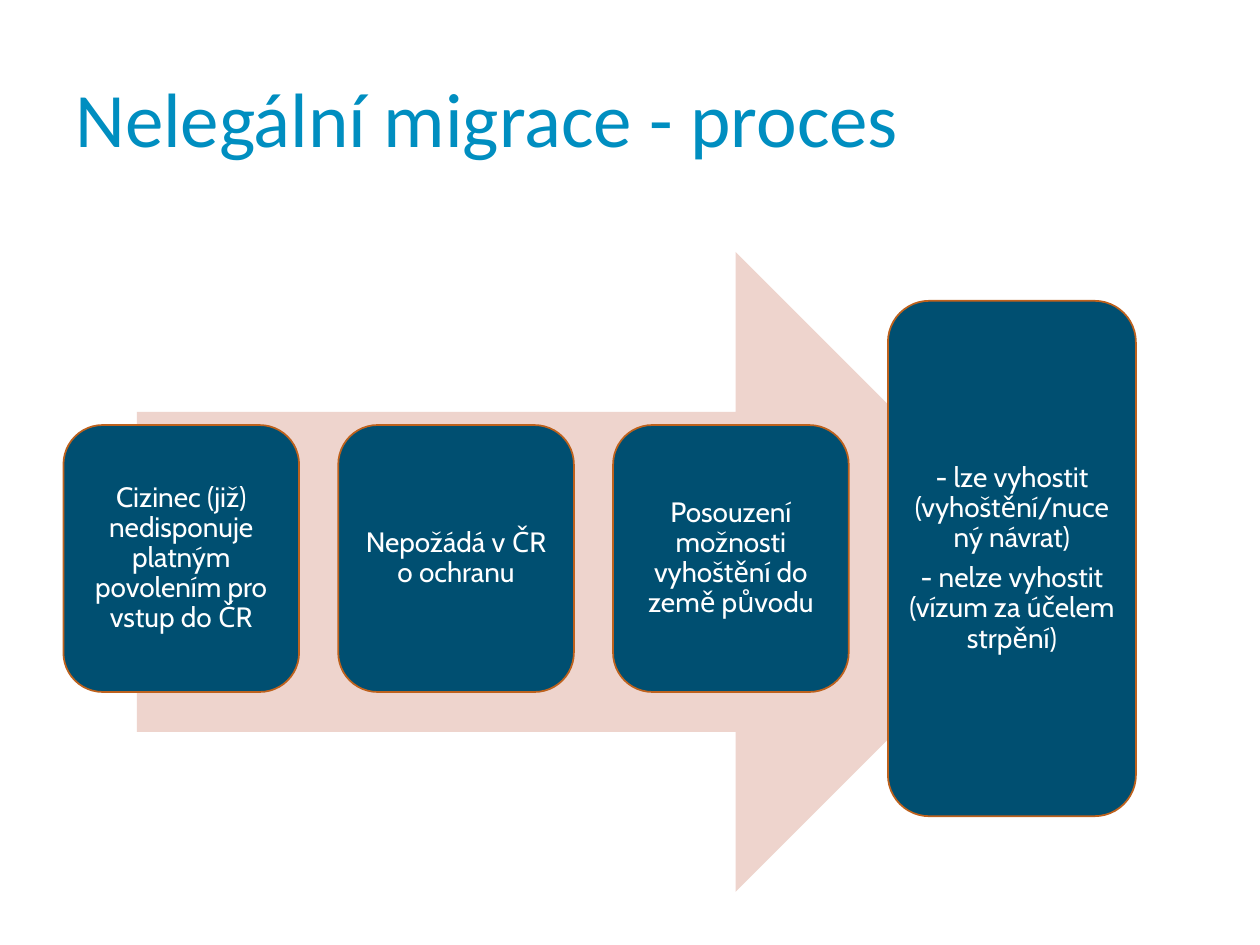
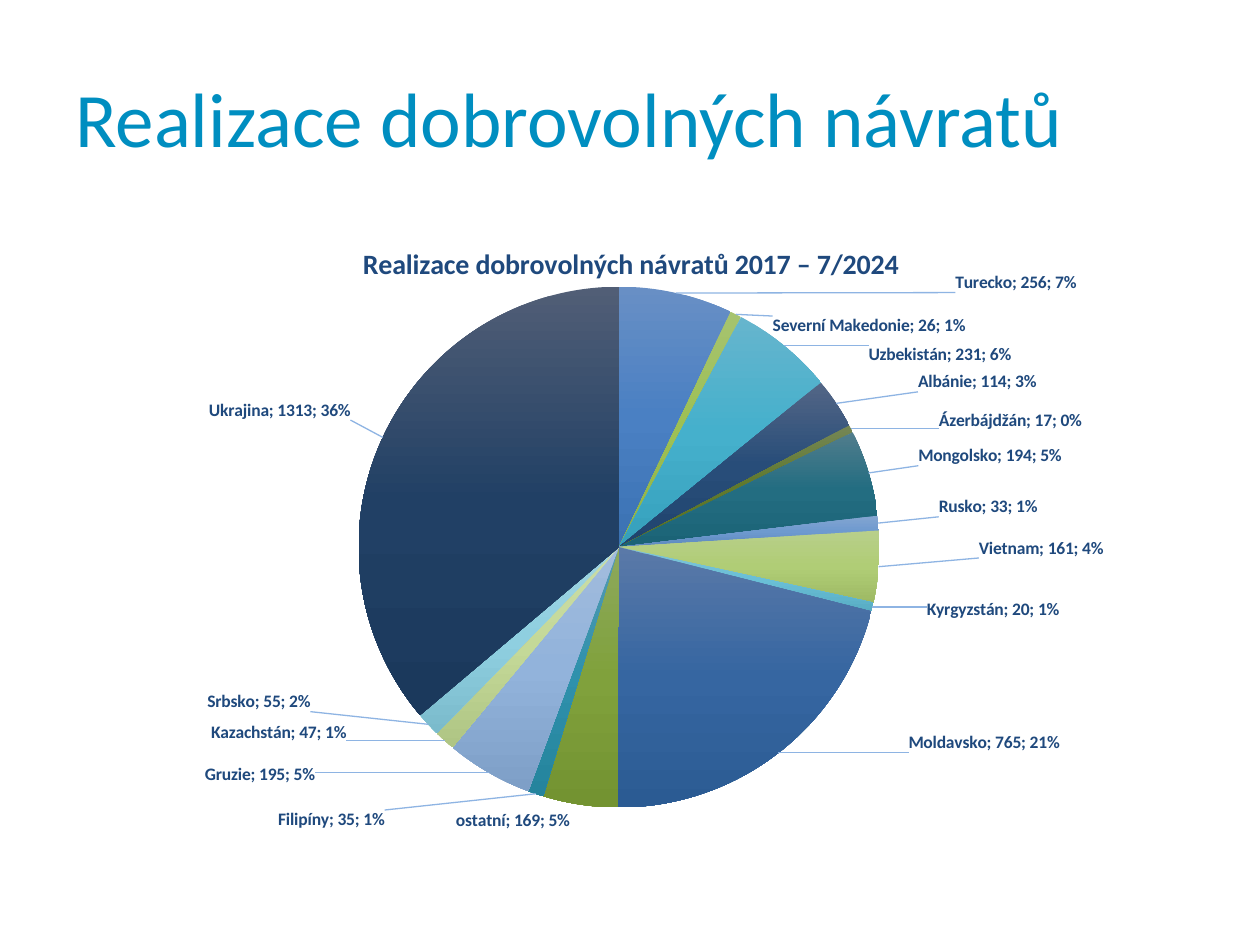
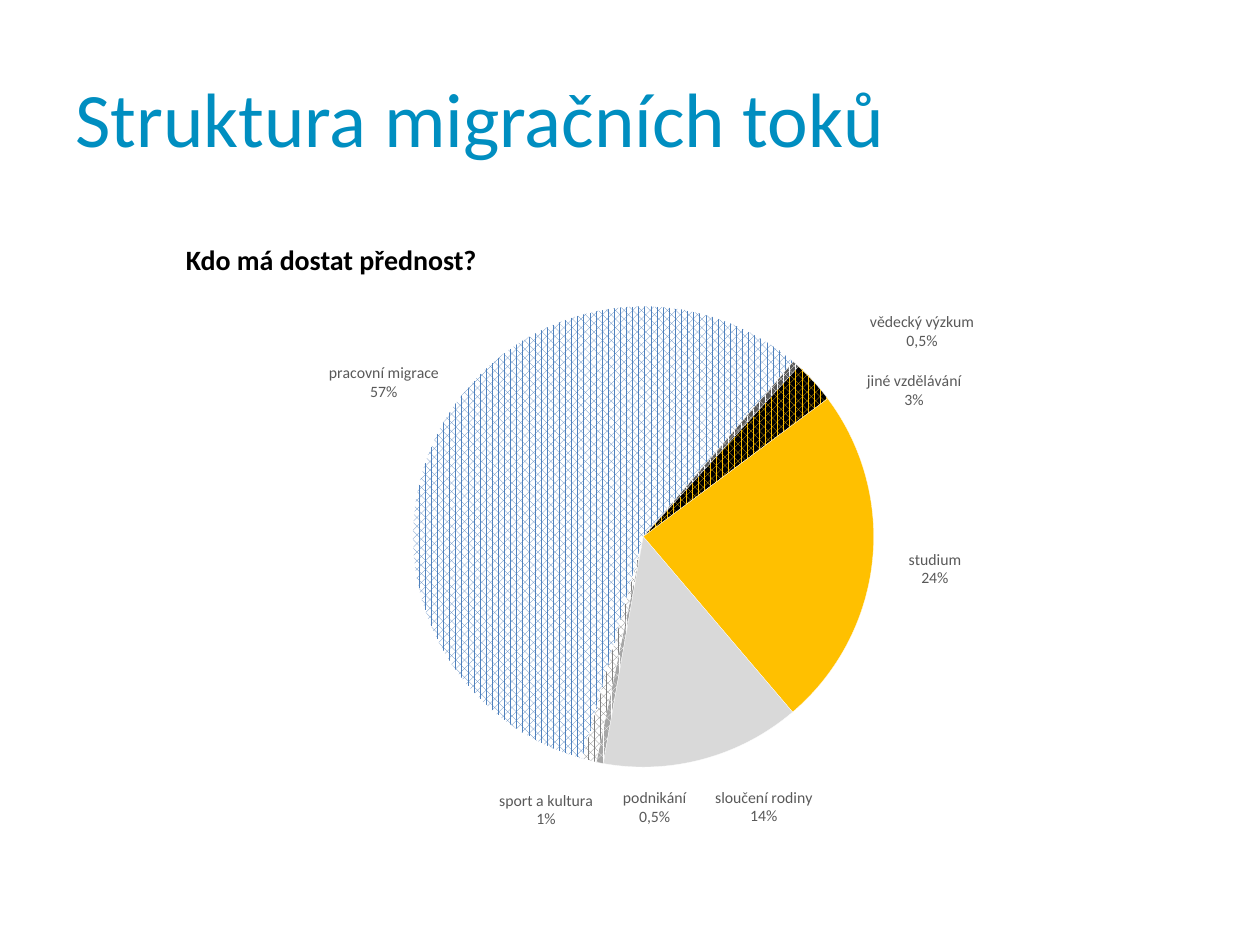
from copy import deepcopy
from math import cos, pi, sin

from pptx import Presentation
from pptx.chart.data import CategoryChartData
from pptx.dml.color import RGBColor
from pptx.enum.chart import XL_CHART_TYPE, XL_LABEL_POSITION
from pptx.enum.dml import MSO_PATTERN
from pptx.enum.shapes import MSO_SHAPE
from pptx.enum.text import MSO_ANCHOR, PP_ALIGN
from pptx.oxml import parse_xml
from pptx.oxml.ns import nsdecls, qn
from pptx.util import Cm, Pt

TITLE_BLUE, LABEL_BLUE, LEADER_BLUE = "008EC0", "1F497D", "8EB4E3"
STEP_FILL, STEP_LINE, ARROW_FILL = "004F71", "BD611D", "EED4CD"
BLACK, WHITE, GREY = "000000", "FFFFFF", "595959"

TITLES = ["Nelegální migrace - proces", "Realizace dobrovolných návratů", "Struktura migračních toků"]

STEPS = [
    "Cizinec (již) nedisponuje platným povolením pro vstup do ČR",
    "Nepožádá v ČR o ochranu",
    "Posouzení možnosti vyhoštění do země původu",
    "- lze vyhostit (vyhoštění/nucený návrat)\n- nelze vyhostit (vízum za účelem strpění)",
]
STEP_LEFT, STEP_PITCH, STEP_MIDDLE = 1.28, 5.54, 11.26
STEP_SIZE, OUTCOME_SIZE = (4.75, 5.38), (5.0, 10.39)

# category, value, label centre in cm, gradient colours
RETURNS = [
    ("Turecko", 256, (20.48, 5.7), ("688FC5", "4A80C3", "3B72B3")),
    ("Severní Makedonie", 26, (17.52, 6.57), ("A6C36F", "9DC054", "8DB045")),
    ("Uzbekistán", 231, (18.95, 7.15), ("66B5CD", "45B0CC", "36A0BC")),
    ("Albánie", 114, (19.7, 7.7), ("536686", "284D79", "20446E")),
    ("Ázerbájdžán", 17, (20.37, 8.48), ("748655", "60792D", "566F25")),
    ("Mongolsko", 194, (19.96, 9.19), ("517D8C", "236D81", "1B6376")),
    ("Rusko", 33, (19.92, 10.22), ("84A5D1", "6E9ACF", "5C88BD")),
    ("Vietnam", 161, (20.99, 11.05), ("B8CF8A", "B0CD76", "9EBA64")),
    ("Kyrgyzstán", 20, (20.02, 12.28), ("81C4D7", "6ABFD6", "58ADC4")),
    ("Moldavsko", 765, (19.84, 14.98), ("5A79A8", "3666A1", "2B5B93")),
    ("ostatní", 169, (10.34, 16.55), ("8DA95D", "80A13C", "739331")),
    ("Filipíny", 35, (6.68, 16.53), ("579BB1", "2F91AC", "25849D")),
    ("Gruzie", 195, (5.24, 15.62), ("A2BCDD", "92B3DB", "7E9FC7")),
    ("Kazachstán", 47, (5.62, 14.78), ("CADCA8", "C4D998", "AFC584")),
    ("Srbsko", 55, (5.22, 14.15), ("A0D4E2", "8FCFE0", "7BBBCC")),
    ("Ukrajina", 1313, (5.64, 8.27), ("515E76", "214065", "1B395C")),
]
RETURNS_TITLE = "Realizace dobrovolných návratů 2017 – 7/2024"
RETURNS_BOX, RETURNS_PIE = (1.27, 4.45, 22.86, 12.57), (12.48, 11.03, 10.5)

PCT_60, PCT_70 = MSO_PATTERN.PERCENT_60, MSO_PATTERN.PERCENT_70
FLOWS = [
    ("podnikání", 0.5, (13.2, 16.29), (PCT_60, WHITE, "A6A6A6")),
    ("sport a kultura", 1, (11.01, 16.33), (PCT_70, "808080", WHITE)),
    ("pracovní migrace", 57, (7.74, 7.72), (PCT_70, "4F81BD", WHITE)),
    ("vědecký výzkum", 0.5, (18.59, 6.69), (PCT_70, WHITE, GREY)),
    ("jiné vzdělávání", 3, (18.43, 7.88), (PCT_70, "FFC000", BLACK)),
    ("studium", 24, (18.85, 11.48), "FFC000"),
    ("sloučení rodiny", 14, (15.4, 16.28), "D9D9D9"),
]
FLOW_TEXTS = {0: "podnikání\n0,5%", 3: "vědecký výzkum\n0,5%"}
FLOWS_QUESTION = "Kdo má dostat přednost?"
FLOWS_BOX, FLOWS_PIE = (3.73, 5.89, 17.55, 11.43), (12.97, 10.82, 9.29)
FLOWS_START = 190


def rgb(colour):
    """Turn a hex string into a colour."""
    return RGBColor.from_string(colour)


def style(font, size, colour, bold=False, name="Calibri"):
    """Set the look of a font."""
    font.size, font.bold, font.name = Pt(size), bold, name
    font.color.rgb = rgb(colour)


def add_text(slide, text, box, size, colour, bold=False):
    """Add one line of text, centred vertically in its box."""
    frame = slide.shapes.add_textbox(*map(Cm, box)).text_frame
    frame.word_wrap, frame.vertical_anchor = True, MSO_ANCHOR.MIDDLE
    frame.text = text
    style(frame.paragraphs[0].runs[0].font, size, colour, bold)


def add_block(slide, preset, box, fill):
    """Add a filled preset shape without a shadow or line."""
    block = slide.shapes.add_shape(preset, *map(Cm, box))
    block.shadow.inherit = False
    block.fill.solid()
    block.fill.fore_color.rgb = rgb(fill)
    block.line.fill.background()
    return block


def add_step(slide, text, box):
    """Add one rounded step of the process."""
    step = add_block(slide, MSO_SHAPE.ROUNDED_RECTANGLE, box, STEP_FILL)
    step.line.color.rgb, step.line.width = rgb(STEP_LINE), Pt(1)
    frame = step.text_frame
    frame.word_wrap, frame.vertical_anchor = True, MSO_ANCHOR.MIDDLE
    frame.margin_left = frame.margin_right = frame.margin_top = frame.margin_bottom = Cm(0.17)
    frame.text = text
    for paragraph in frame.paragraphs:
        paragraph.alignment = PP_ALIGN.CENTER
        paragraph.line_spacing, paragraph.space_after = 0.9, Pt(5.6)
        style(paragraph.runs[0].font, 16, WHITE, name="Cabin")


def chart_xml(tag, content="", attributes=""):
    """Make one chart element."""
    return parse_xml(f"<c:{tag} {nsdecls('c', 'a')} {attributes}>{content}</c:{tag}>")


def set_layout(parent, index, **parts):
    """Give a chart part a manual layout."""
    for layout in parent.findall(qn("c:layout")):
        parent.remove(layout)
    content = "".join(f'<c:{key} val="{value}"/>' for key, value in parts.items())
    parent.insert(index, chart_xml("layout", f"<c:manualLayout>{content}</c:manualLayout>"))


def paint(chart, point, paint_spec):
    """Fill a slice with a gradient, a pattern or a plain colour."""
    fill = point.format.fill
    if isinstance(paint_spec, str):
        fill.solid()
        fill.fore_color.rgb = rgb(paint_spec)
    elif isinstance(paint_spec[0], str):
        fill.gradient()
        fill.gradient_angle = 270
        stop_list = chart.element.xpath(".//c:dPt[last()]//a:gsLst")[0]
        stop_list.append(deepcopy(stop_list[0]))
        for stop, position, colour in zip(fill.gradient_stops, (0, 0.5, 1), paint_spec):
            stop.position, stop.color.rgb = position, rgb(colour)
    else:
        fill.patterned()
        fill.pattern = paint_spec[0]
        fill.fore_color.rgb, fill.back_color.rgb = map(rgb, paint_spec[1:])


def add_pie(slide, rows, box, circle, label_font, separator, show_value=False,
            start=0, texts=None, edge=None):
    """Add a pie with a given centre and diameter, and labels at given centres."""
    data = CategoryChartData()
    data.categories = [row[0] for row in rows]
    data.add_series("Series 1", [row[1] for row in rows])
    chart = slide.shapes.add_chart(XL_CHART_TYPE.PIE, *map(Cm, box), data).chart
    chart.has_legend = chart.has_title = False
    style(chart.font, 10, BLACK)
    chart.plots[0].vary_by_categories = True
    left, top, width, height = box
    centre_x, centre_y, diameter = circle
    set_layout(chart.element.xpath(".//c:plotArea")[0], 0, layoutTarget="inner",
               xMode="edge", yMode="edge",
               x=round((centre_x - diameter / 2 - left) / width, 4),
               y=round((centre_y - diameter / 2 - top) / height, 4),
               w=round(diameter / width, 4), h=round(diameter / height, 4))
    pie = chart.element.xpath(".//c:pieChart")[0]
    for angle in pie.findall(qn("c:firstSliceAng")):
        pie.remove(angle)
    pie.append(chart_xml("firstSliceAng", attributes=f'val="{start}"'))

    label_radius = diameter / 4
    total, passed = sum(row[1] for row in rows), 0
    series = chart.plots[0].series[0]
    labels = series.data_labels
    style(labels.font, *label_font)
    labels.position = XL_LABEL_POSITION.CENTER
    labels.show_value, labels.show_category_name, labels.show_percentage = show_value, True, True

    for index, (_, value, (label_x, label_y), paint_spec) in enumerate(rows):
        point = series.points[index]
        paint(chart, point, paint_spec)
        if edge:
            point.format.line.color.rgb, point.format.line.width = rgb(edge), Pt(0.15)
        else:
            point.format.line.fill.background()
        label = point.data_label
        if texts and index in texts:
            label.text_frame.text = texts[index]
            for paragraph in label.text_frame.paragraphs:
                style(paragraph.runs[0].font, *label_font)
        else:
            style(label.font, *label_font)
        label.position = XL_LABEL_POSITION.CENTER
        middle = 2 * pi * (start / 360 + (passed + value / 2) / total)
        passed += value
        offset_x = label_x - centre_x - label_radius * sin(middle)
        offset_y = label_y - centre_y + label_radius * cos(middle)
        element = chart.element.xpath(f".//c:dLbl[c:idx/@val='{index}']")[0]
        set_layout(element, 1, x=round(offset_x / width, 4), y=round(offset_y / height, 4))
        for tag, shown in (("showVal", show_value), ("showCatName", True), ("showPercent", True)):
            element.find(qn(f"c:{tag}")).set("val", str(int(shown)))
        element.append(chart_xml("separator", separator))

    for leader in chart.element.xpath(".//c:showLeaderLines"):
        leader.addprevious(chart_xml("separator", separator))
        leader.set("val", str(int(show_value)))
        if show_value:
            leader.addnext(chart_xml("leaderLines", '<c:spPr><a:ln w="9525"><a:solidFill>'
                           f'<a:srgbClr val="{LEADER_BLUE}"/></a:solidFill></a:ln></c:spPr>'))
    return chart


def build_process(slide):
    """Draw the arrow and the steps over it."""
    add_block(slide, MSO_SHAPE.RIGHT_ARROW, (2.76, 5.08, 18.52, 12.9), ARROW_FILL)
    for index, text in enumerate(STEPS):
        width, height = OUTCOME_SIZE if text == STEPS[-1] else STEP_SIZE
        left = STEP_LEFT + index * STEP_PITCH
        add_step(slide, text, (left, STEP_MIDDLE - height / 2, width, height))


def build_returns(slide):
    """Draw the pie of voluntary returns."""
    chart = add_pie(slide, RETURNS, RETURNS_BOX, RETURNS_PIE, (10, LABEL_BLUE, True), "; ",
                    show_value=True)
    chart.has_title = True
    chart.chart_title.text_frame.text = RETURNS_TITLE
    style(chart.chart_title.text_frame.paragraphs[0].runs[0].font, 16, LABEL_BLUE, True)
    set_layout(chart.element.xpath(".//c:title")[0], 1, xMode="edge", yMode="edge", x=0.26, y=0.03)


def build_flows(slide):
    """Draw the question and the pie of migration flows."""
    add_text(slide, FLOWS_QUESTION, (3.5, 4.75, 9.5, 0.94), 16, BLACK, True)
    add_pie(slide, FLOWS, FLOWS_BOX, FLOWS_PIE, (9, GREY), "\n", start=FLOWS_START,
            texts=FLOW_TEXTS, edge=WHITE)


def main():
    """Build and save the three slides."""
    deck = Presentation()
    deck.slide_width, deck.slide_height = Cm(25.4), Cm(19.05)
    for title, build in zip(TITLES, (build_process, build_returns, build_flows)):
        slide = deck.slides.add_slide(deck.slide_layouts[6])
        add_text(slide, title, (1.27, 0.76, 22.86, 3.18), 44, TITLE_BLUE)
        build(slide)
    deck.save("out.pptx")


if __name__ == "__main__":
    main()
